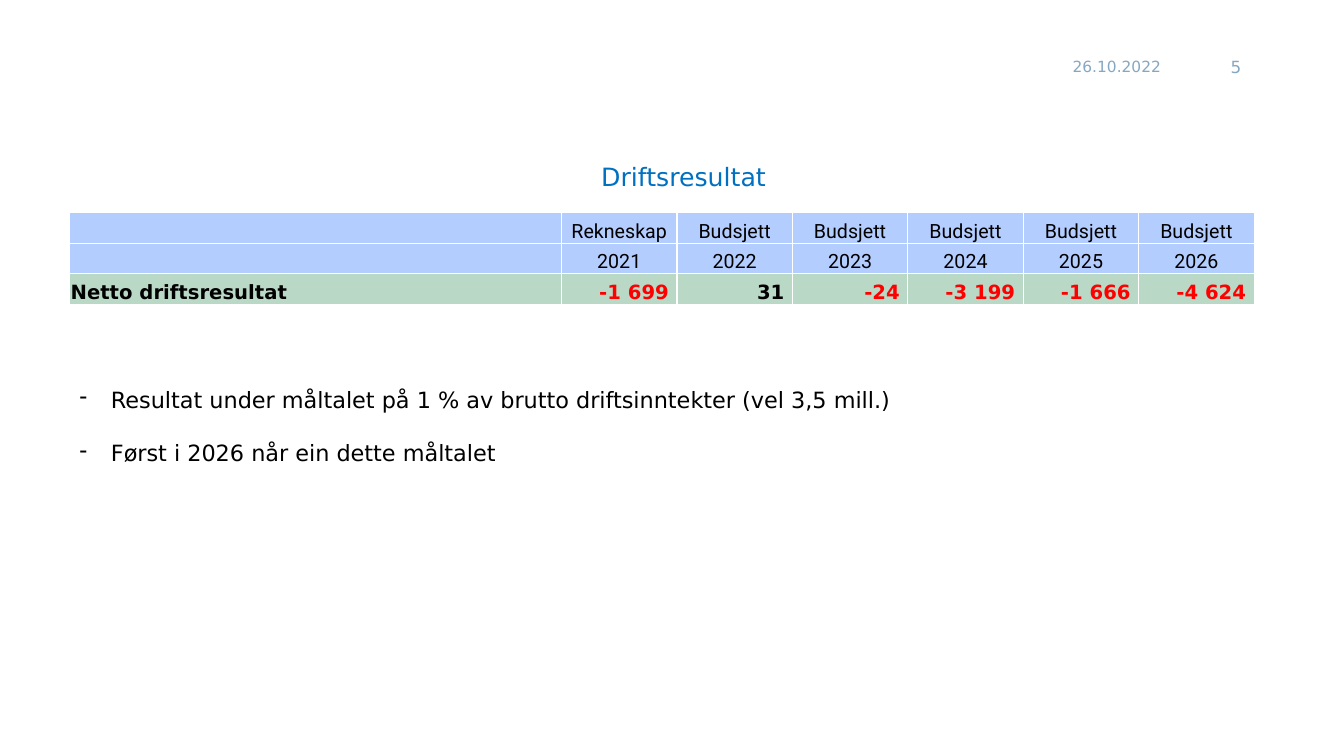
import lxml.etree
import pptx
import pptx.dml.color
import pptx.enum.text
import pptx.oxml.ns
import pptx.util

COLORS = {
    "muted": "86A7C2",
    "title": "0070C0",
    "text": "000000",
    "negative": "FF0000",
    "header_fill": "B4CDFF",
    "result_fill": "B9D9C6",
    "border": "FFFFFF",
}
BODY_FONT, HEADER_FONT = "DejaVu Sans", "Roboto"
SLIDE_WIDTH, SLIDE_HEIGHT = pptx.util.Inches(13.33), pptx.util.Inches(7.5)
LABEL_UNITS = 4.26  # label column, in widths of a year column

HEADERS = [
    ["", "Rekneskap"] + ["Budsjett"] * 5,
    [""] + [str(year) for year in range(2021, 2027)],
]
RESULT = ["Netto driftsresultat", "-1 699", "31", "-24", "-3 199", "-1 666", "-4 624"]
BULLETS = [
    "Resultat under måltalet på 1 % av brutto driftsinntekter (vel 3,5 mill.)",
    "Først i 2026 når ein dette måltalet",
]

ALIGN = pptx.enum.text.PP_ALIGN
ANCHOR = pptx.enum.text.MSO_ANCHOR


def color(name):
    return pptx.dml.color.RGBColor.from_string(COLORS[name])


def box(left, top, width, height):
    """Turn percentages of the slide into lengths."""
    return (
        int(SLIDE_WIDTH * left / 100),
        int(SLIDE_HEIGHT * top / 100),
        int(SLIDE_WIDTH * width / 100),
        int(SLIDE_HEIGHT * height / 100),
    )


def place(shape, area):
    shape.left, shape.top, shape.width, shape.height = area


def add_element(parent, tag, **attributes):
    name = pptx.oxml.ns.qn(tag)
    return lxml.etree.SubElement(parent, name, attributes)


def format_paragraph(paragraph, size, color_name, align=ALIGN.LEFT, font=BODY_FONT, bold=False):
    paragraph.alignment = align
    for run in paragraph.runs:
        run.font.name = font
        run.font.size = pptx.util.Pt(size)
        run.font.bold = bold
        run.font.color.rgb = color(color_name)


def prepare_frame(shape, anchor):
    frame = shape.text_frame
    frame.word_wrap = True
    frame.auto_size = pptx.enum.text.MSO_AUTO_SIZE.NONE
    frame.vertical_anchor = anchor
    return frame


def add_header_note(slide, area, text, size, align):
    frame = prepare_frame(slide.shapes.add_textbox(*area), ANCHOR.MIDDLE)
    frame.text = text
    format_paragraph(frame.paragraphs[0], size, "muted", align)


def fill_title(slide, area):
    title = slide.shapes.title
    place(title, area)
    frame = prepare_frame(title, ANCHOR.TOP)
    frame.text = "Driftsresultat"
    format_paragraph(frame.paragraphs[0], 18, "title", ALIGN.CENTER)


def fill_bullets(slide, area):
    body = slide.placeholders[1]
    place(body, area)
    frame = prepare_frame(body, ANCHOR.TOP)
    frame.text = "\n".join(BULLETS)
    indent = pptx.util.Inches(0.31)
    for index, paragraph in enumerate(frame.paragraphs):
        paragraph.space_before = pptx.util.Pt(19 if index else 0)
        properties = paragraph._p.get_or_add_pPr()
        properties.set("marL", str(indent))
        properties.set("indent", str(-indent))
        add_element(properties, "a:buFontTx")
        add_element(properties, "a:buChar", char="-")
        format_paragraph(paragraph, 16, "text")


def style_cell(cell, text, fill):
    cell.margin_left = cell.margin_top = cell.margin_right = pptx.util.Inches(0.01)
    cell.margin_bottom = 0
    cell.vertical_anchor = ANCHOR.BOTTOM
    properties = cell._tc.get_or_add_tcPr()
    for side in ("a:lnL", "a:lnR", "a:lnT", "a:lnB"):
        line = add_element(properties, side, w=str(pptx.util.Pt(1)))
        add_element(add_element(line, "a:solidFill"), "a:srgbClr", val=COLORS["border"])
    cell.fill.solid()
    cell.fill.fore_color.rgb = color(fill)
    cell.text = text
    paragraph = cell.text_frame.paragraphs[0]
    if not text:
        add_element(paragraph._p, "a:endParaRPr", sz="1400")
    return paragraph


def add_result_table(slide, area):
    rows = HEADERS + [RESULT]
    table = slide.shapes.add_table(len(rows), len(RESULT), *area).table
    table.first_row = table.horz_banding = False
    year_width = area[2] / (LABEL_UNITS + len(RESULT) - 1)
    for index, column in enumerate(table.columns):
        column.width = int(year_width * (1 if index else LABEL_UNITS))
    for row in table.rows:
        row.height = area[3] // len(rows)

    for row_index, texts in enumerate(HEADERS):
        for column_index, text in enumerate(texts):
            paragraph = style_cell(table.cell(row_index, column_index), text, "header_fill")
            format_paragraph(paragraph, 14, "text", ALIGN.CENTER, HEADER_FONT)
    for column_index, text in enumerate(RESULT):
        cell = table.cell(len(HEADERS), column_index)
        paragraph = style_cell(cell, text, "result_fill")
        color_name = "negative" if text.startswith("-") else "text"
        align = ALIGN.RIGHT if column_index else ALIGN.LEFT
        format_paragraph(paragraph, 14, color_name, align, bold=True)
        if column_index:
            cell.margin_right = pptx.util.Inches(0.08)


def main():
    presentation = pptx.Presentation()
    presentation.slide_width, presentation.slide_height = SLIDE_WIDTH, SLIDE_HEIGHT
    slide = presentation.slides.add_slide(presentation.slide_layouts[1])
    add_header_note(slide, box(79.07, 6.13, 8.63, 5.33), "26.10.2022", 11, ALIGN.LEFT)
    add_header_note(slide, box(88.82, 6.13, 4.28, 5.33), "5", 12, ALIGN.RIGHT)
    fill_title(slide, box(17.85, 20.67, 66.02, 5.33))
    fill_bullets(slide, box(5.18, 50.4, 86.57, 15.2))
    add_result_table(slide, box(5.18, 28.13, 88.15, 12.13))
    presentation.save("out.pptx")


if __name__ == "__main__":
    main()
